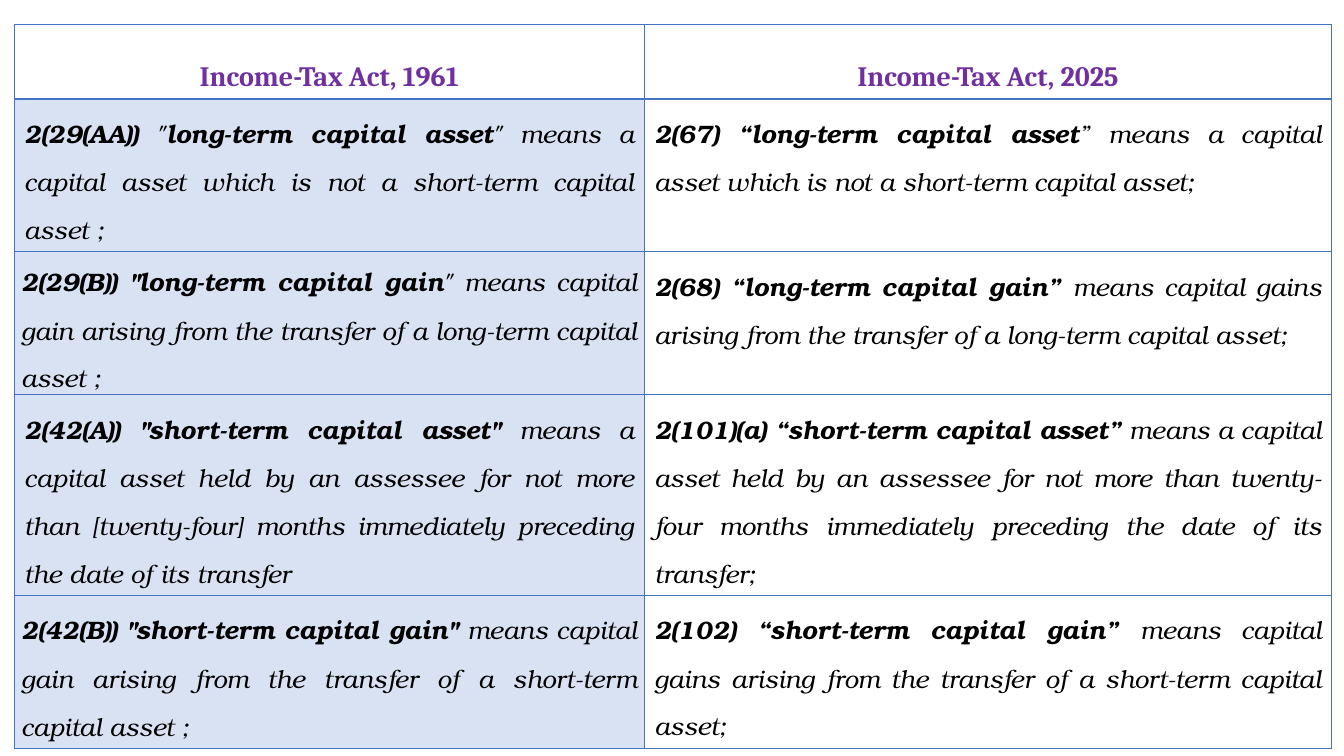
from dataclasses import dataclass

from lxml import etree
from pptx import Presentation
from pptx.dml.color import RGBColor
from pptx.enum.text import MSO_ANCHOR, PP_ALIGN
from pptx.oxml.ns import qn
from pptx.util import Inches, Pt

CENTER, JUSTIFY = PP_ALIGN.CENTER, PP_ALIGN.JUSTIFY
MIDDLE = MSO_ANCHOR.MIDDLE

BLUE = RGBColor(0x44, 0x72, 0xC4)
PURPLE = RGBColor(0x70, 0x30, 0xA0)
BLACK = RGBColor(0, 0, 0)

SLIDE_W, SLIDE_H = 13.33, 7.5
TABLE_LEFT, TABLE_TOP = 0.14, 0.24
COLUMN_WIDTHS = (6.25, 6.82)
ROW_HEIGHTS = (0.73, 1.51, 1.42, 1.98, 1.51)
OLD_ACT_OPACITY = 20000


@dataclass(frozen=True)
class Span:
    text: str
    bold: bool = False


@dataclass(frozen=True)
class Definition:
    old: tuple[Span, ...]
    new: tuple[Span, ...]
    tight: bool = False


HEADINGS = ("Income-Tax Act, 1961", "Income-Tax Act, 2025")
DEFINITIONS = (
    Definition(
        (Span("2(29(AA)) ", True), Span('"'), Span("long-term capital asset", True),
         Span('" means a capital asset which is not a short-term capital asset ;')),
        (Span("2(67) “long-term capital asset", True),
         Span("” means a capital asset which is not a short-term capital asset;")),
    ),
    Definition(
        (Span('2(29(B)) "long-term capital gain', True),
         Span('" means capital gain arising from the transfer of a long-term capital asset ;')),
        (Span("2(68) “long-term capital gain” ", True),
         Span("means capital gains arising from the transfer of a long-term capital asset; ")),
        tight=True,
    ),
    Definition(
        (Span('2(42(A)) "short-term capital asset" ', True),
         Span("means a capital asset held by an assessee for not more than [twenty-four] "
              "months immediately preceding the date of its transfer ")),
        (Span("2(101)(a) “short-term capital asset”", True),
         Span(" means a capital asset held by an assessee for not more than twenty-four "
              "months immediately preceding the date of its transfer;")),
    ),
    Definition(
        (Span('2(42(B)) "short-term capital gain" ', True),
         Span("means capital gain arising from the transfer of a short-term capital asset ;")),
        (Span("2(102) “short-term capital gain” ", True),
         Span("means capital gains arising from the transfer of a short-term capital asset;")),
        tight=True,
    ),
)


def set_borders(cell, top: float = 1, bottom: float = 1) -> None:
    tc_pr = cell._tc.get_or_add_tcPr()
    for side, width in (("L", 1), ("R", 1), ("T", top), ("B", bottom)):
        ln = etree.SubElement(tc_pr, qn(f"a:ln{side}"), w=str(Pt(width)))
        fill = etree.SubElement(ln, qn("a:solidFill"))
        etree.SubElement(fill, qn("a:srgbClr"), val=str(BLUE))


def tint(cell) -> None:
    cell.fill.solid()
    cell.fill.fore_color.rgb = BLUE
    color = cell._tc.tcPr.find(qn("a:solidFill")).find(qn("a:srgbClr"))
    etree.SubElement(color, qn("a:alpha"), val=str(OLD_ACT_OPACITY))


def add_run(p, span: Span, font: str, size: int, color: RGBColor, italic: bool) -> None:
    r = p.add_run()
    r.text = span.text
    r.font.name = font
    r.font.size = Pt(size)
    r.font.bold = span.bold
    r.font.italic = italic
    r.font.color.rgb = color


def write_heading(cell, text: str) -> None:
    set_borders(cell, bottom=2)
    cell.fill.background()
    p = cell.text_frame.paragraphs[0]
    p.alignment = CENTER
    p.line_spacing = 2.0
    add_run(p, Span(text, True), "Cambria", 20, PURPLE, False)


def write_definition(cell, spans: tuple[Span, ...], top: float) -> None:
    set_borders(cell, top=top)
    cell.fill.background()
    p = cell.text_frame.paragraphs[0]
    p.alignment = JUSTIFY
    p.line_spacing = Pt(34)
    for span in spans:
        add_run(p, span, "TeX Gyre Bonum", 18, BLACK, True)


def tighten(cell) -> None:
    cell.vertical_anchor = MIDDLE
    cell.margin_left = cell.margin_right = Inches(0.07)
    cell.margin_top = cell.margin_bottom = 0


def main() -> None:
    prs = Presentation()
    prs.slide_width, prs.slide_height = Inches(SLIDE_W), Inches(SLIDE_H)
    s = prs.slides.add_slide(prs.slide_layouts[6])
    table = s.shapes.add_table(
        len(ROW_HEIGHTS), len(COLUMN_WIDTHS), Inches(TABLE_LEFT), Inches(TABLE_TOP),
        Inches(sum(COLUMN_WIDTHS)), Inches(sum(ROW_HEIGHTS))).table
    table.first_row = table.horz_banding = False
    for column, width in zip(table.columns, COLUMN_WIDTHS):
        column.width = Inches(width)
    for row, height in zip(table.rows, ROW_HEIGHTS):
        row.height = Inches(height)

    for col, heading in enumerate(HEADINGS):
        write_heading(table.cell(0, col), heading)
    for row, definition in enumerate(DEFINITIONS, start=1):
        top = 2 if row == 1 else 1
        old, new = table.cell(row, 0), table.cell(row, 1)
        write_definition(old, definition.old, top)
        write_definition(new, definition.new, top)
        tint(old)
        if definition.tight:
            tighten(old)
    prs.save("out.pptx")


if __name__ == "__main__":
    main()
